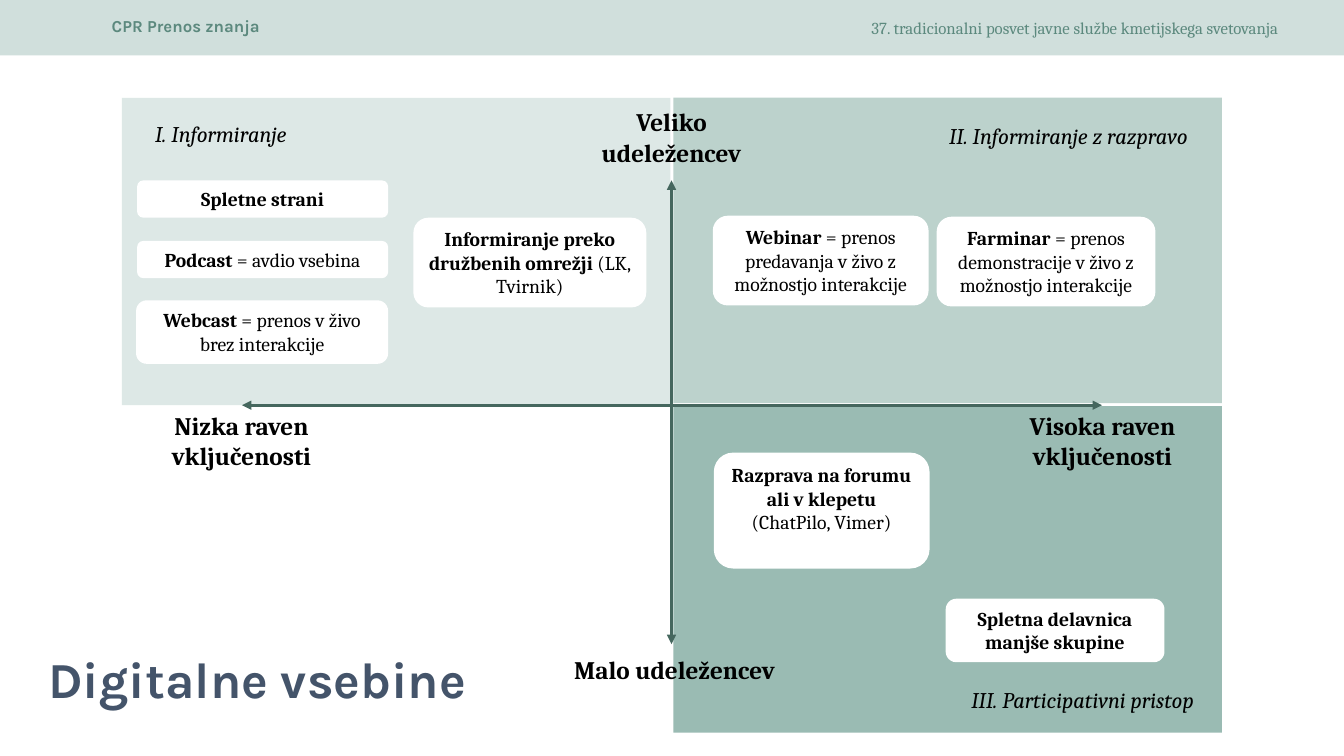
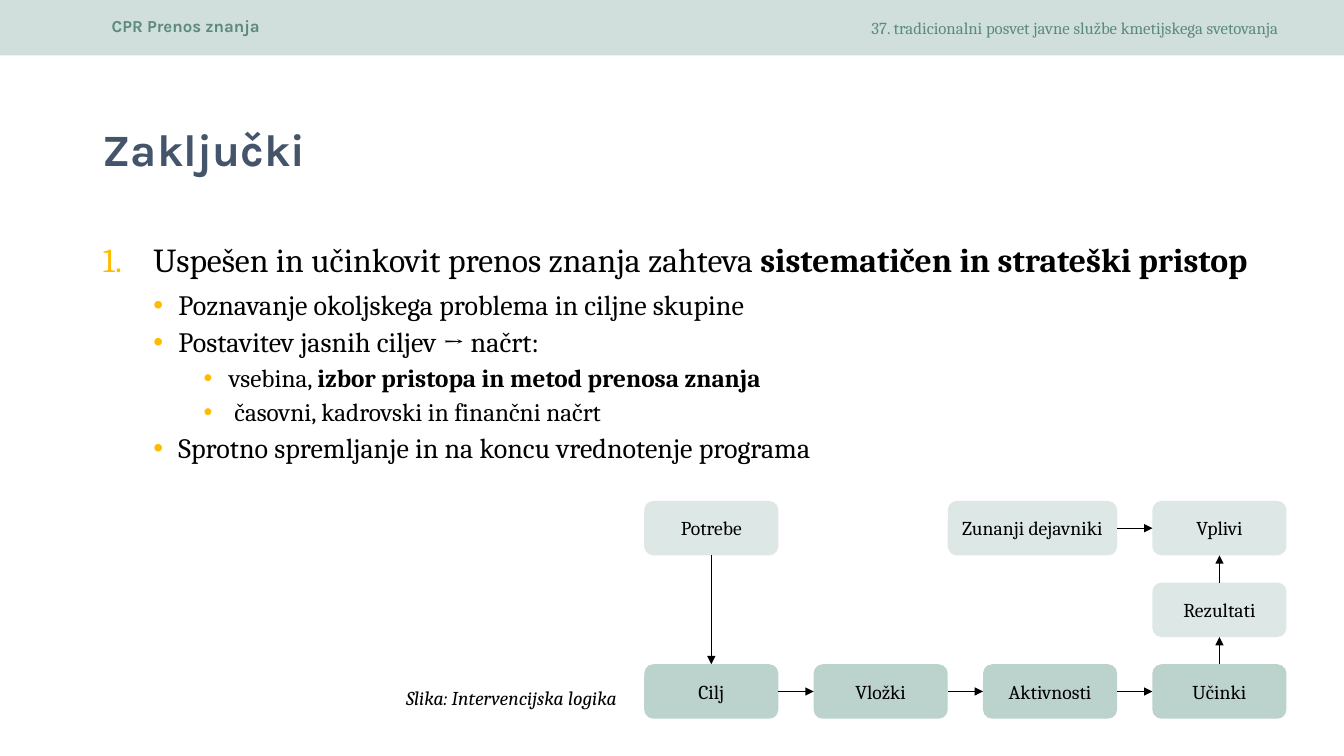
from lxml import etree
from pptx import Presentation
from pptx.dml.color import RGBColor
from pptx.enum import shapes as kinds, text as txt
from pptx.oxml.ns import qn
from pptx.util import Inches, Pt

BAND, HEAD, TITLE = "D0DFDC", "5C897E", "44546A"
PALE, MID, DEEP, AXIS = "DDE8E6", "BCD2CC", "9ABBB3", "45675E"
WHITE, BLACK, GOLD = "FFFFFF", "000000", "FFBB00"
SERIF, SANS = "Cambria", "Karla"
LEFT, CENTER, RIGHT = txt.PP_ALIGN.LEFT, txt.PP_ALIGN.CENTER, txt.PP_ALIGN.RIGHT
TOP, MIDDLE = txt.MSO_ANCHOR.TOP, txt.MSO_ANCHOR.MIDDLE
RECT = kinds.MSO_SHAPE.RECTANGLE
ROUND = kinds.MSO_SHAPE.ROUNDED_RECTANGLE
CARD = kinds.MSO_SHAPE.FLOWCHART_ALTERNATE_PROCESS

# Text between ** marks is bold.
QUADS = [((6.68, 0.97, 5.44, 3.03), MID),
         ((1.21, 0.97, 5.44, 3.05), PALE),
         ((6.68, 4.03, 5.44, 3.24), DEEP)]
AXES = [((6.66, 1.79), (6.66, 6.39)), ((2.4, 4.02), (10.93, 4.02))]
CARDS = [
    ((1.36, 1.79, 2.49, 0.37), "**Spletne strani**"),
    ((1.36, 2.39, 2.49, 0.37), "**Podcast** = avdio vsebina"),
    ((1.35, 2.98, 2.5, 0.63), "**Webcast** = prenos v živo brez interakcije"),
    ((4.1, 2.16, 2.31, 0.89),
     "**Informiranje preko družbenih omrežji** (LK, Tvirnik)"),
    ((7.07, 2.14, 2.14, 0.89),
     "**Webinar** = prenos predavanja v živo z možnostjo interakcije"),
    ((9.29, 2.15, 2.17, 0.89),
     "**Farminar** = prenos demonstracije v živo z možnostjo interakcije"),
    ((7.08, 4.49, 2.14, 1.15),
     "**Razprava na forumu ali v klepetu** (ChatPilo, Vimer)"),
    ((9.38, 5.94, 2.17, 0.63), "**Spletna delavnica manjše skupine**"),
]
ENDS = [((5.66, 1.01, 2, 0.7), "Veliko udeležencev"),
        ((5.53, 6.44, 2.32, 0.41), "Malo udeležencev"),
        ((1.44, 4.02, 1.91, 0.71), "Nizka raven vključenosti"),
        ((9.97, 4.02, 1.93, 0.71), "Visoka raven vključenosti")]
LABELS = [((1.44, 1.14, 2.65, 0.37), "I. Informiranje", LEFT),
          ((8.84, 1.16, 3.04, 0.37), "II. Informiranje z razpravo", RIGHT),
          ((8.84, 6.76, 3.1, 0.37), "III. Participativni pristop", RIGHT)]

POINTS = [
    (0, "Uspešen in učinkovit prenos znanja zahteva "
        "**sistematičen in strateški pristop**"),
    (1, "Poznavanje okoljskega problema in ciljne skupine"),
    (1, "Postavitev jasnih ciljev → načrt:"),
    (2, "vsebina, **izbor pristopa in metod prenosa znanja**"),
    (2, " časovni, kadrovski in finančni načrt"),
    (1, "Sprotno spremljanje in na koncu vrednotenje programa"),
]
# Per level: size, left margin, hanging indent, space before, space after
LEVELS = [(24, 0.5, 0.5, 0, 3), (20, 0.75, 0.25, 5, 0), (18, 1.25, 0.25, 5, 0)]

# Name, column, row, fill
STEPS = [("Potrebe", 0, 0, PALE), ("Cilj", 0, 2, MID), ("Vložki", 1, 2, MID),
         ("Aktivnosti", 2, 2, MID), ("Učinki", 3, 2, MID),
         ("Rezultati", 3, 1, PALE), ("Vplivi", 3, 0, PALE),
         ("Zunanji dejavniki", 2, 0, PALE)]
WIDE = {"Zunanji dejavniki": 1.68}
# From, side, to, side
LINKS = [("Potrebe", 2, "Cilj", 0), ("Cilj", 3, "Vložki", 1),
         ("Vložki", 3, "Aktivnosti", 1), ("Aktivnosti", 3, "Učinki", 1),
         ("Učinki", 0, "Rezultati", 2), ("Rezultati", 0, "Vplivi", 2),
         ("Zunanji dejavniki", 3, "Vplivi", 1)]


def color(code):
    return RGBColor.from_string(code)


def place(shape, at):
    shape.left, shape.top, shape.width, shape.height = map(Inches, at)


def fill_para(para, words, size=14, font=SERIF, ink=BLACK, bold=False,
              italic=False, align=LEFT, spacing=None):
    para.alignment = align
    if spacing:
        para.line_spacing = spacing
    for i, part in enumerate(words.split("**")):
        if part:
            run = para.add_run()
            run.text = part
            face = run.font
            face.name, face.size = font, Pt(size)
            face.bold, face.italic = bold or i % 2 == 1, italic
            face.color.rgb = color(ink)


def write(shape, words, anchor=TOP, **style):
    frame = shape.text_frame
    frame.word_wrap = True
    frame.auto_size = txt.MSO_AUTO_SIZE.NONE
    frame.vertical_anchor = anchor
    fill_para(frame.paragraphs[0], words, **style)


def label(slide, at, words, **style):
    box = slide.shapes.add_textbox(*map(Inches, at))
    write(box, words, **style)
    return box


def block(slide, kind, at, fill, words="", **style):
    shape = slide.shapes.add_shape(kind, *map(Inches, at))
    shape.shadow.inherit = False
    shape.fill.solid()
    shape.fill.fore_color.rgb = color(fill)
    shape.line.fill.background()
    if words:
        write(shape, words, align=CENTER, **style)
    return shape


def arrow(slide, start, end, ink, width, tips=("tailEnd",)):
    points = map(Inches, (*start, *end))
    line = slide.shapes.add_connector(kinds.MSO_CONNECTOR.STRAIGHT, *points)
    line.line.color.rgb = color(ink)
    line.line.width = Pt(width)
    props = line.element.spPr
    for tip in tips:
        etree.SubElement(props.find(qn("a:ln")), qn("a:" + tip), type="triangle")
    etree.SubElement(props, qn("a:effectLst"))
    return line


def title(slide, at, words, size):
    place(slide.shapes.title, at)
    write(slide.shapes.title, words, anchor=MIDDLE, size=size, font=SANS,
          ink=TITLE, bold=True, spacing=0.9)


def bullet(para, level):
    """Give a list paragraph its number or dot, indent and spacing."""
    size, margin, hang, before, after = LEVELS[level]
    para.level = level
    props = para._p.get_or_add_pPr()
    props.set("marL", str(Inches(margin)))
    props.set("indent", str(-Inches(hang)))
    tint = etree.SubElement(props, qn("a:buClr"))
    etree.SubElement(tint, qn("a:srgbClr"), val=GOLD)
    if level:
        etree.SubElement(props, qn("a:buFont"), typeface="Arial")
        etree.SubElement(props, qn("a:buChar"), char="•")
    else:
        etree.SubElement(props, qn("a:buFont"), typeface="+mj-lt")
        etree.SubElement(props, qn("a:buAutoNum"), type="arabicPeriod")
    para.space_before, para.space_after = Pt(before), Pt(after)
    return size


def add_header(deck, slide):
    """Draw the band and its texts, then move them to the slide master."""
    parts = [
        block(slide, RECT, (0, 0, 13.33, 0.55), BAND),
        label(slide, (1.01, 0.11, 6.67, 0.3), "CPR Prenos znanja",
              size=12, font=SANS, ink=HEAD, bold=True),
        label(slide, (8.23, 0.08, 4.55, 0.4),
              "37. tradicionalni posvet javne službe kmetijskega svetovanja",
              size=12, ink=HEAD, align=RIGHT, anchor=MIDDLE),
    ]
    tree = deck.slide_master.shapes.element
    for i, part in enumerate(parts):
        tree.insert(2 + i, part.element)


def build_matrix(slide):
    title(slide, (0.38, 6.04, 5.49, 1.45), "Digitalne vsebine", 36)
    for at, fill in QUADS:
        block(slide, RECT, at, fill)
    for start, end in AXES:
        arrow(slide, start, end, AXIS, 2.25, ("headEnd", "tailEnd"))
    for at, words in CARDS:
        block(slide, CARD, at, WHITE, words)
    for at, words in ENDS:
        label(slide, at, words, size=18, bold=True, align=CENTER)
    for at, words, align in LABELS:
        label(slide, at, words, size=16, italic=True, align=align)


def build_summary(slide):
    title(slide, (0.92, 0.78, 11.5, 1.45), "Zaključki", 32)
    body = slide.placeholders[1]
    place(body, (0.92, 2.37, 12.01, 4.76))
    frame = body.text_frame
    frame.auto_size = txt.MSO_AUTO_SIZE.NONE
    for i, (level, words) in enumerate(POINTS):
        para = frame.add_paragraph() if i else frame.paragraphs[0]
        size = bullet(para, level)
        fill_para(para, words, size=size, spacing=0.9)

    steps = {}
    for name, col, row, fill in STEPS:
        width = WIDE.get(name, 1.33)
        right = 7.72 + 1.68 * col
        at = (right - width, 4.97 + 0.81 * row, width, 0.54)
        steps[name] = block(slide, ROUND, at, fill, name, anchor=MIDDLE)
    for source, out, target, into in LINKS:
        line = arrow(slide, (0, 0), (1, 1), BLACK, 0.5)
        line.begin_connect(steps[source], out)
        line.end_connect(steps[target], into)
    label(slide, (3.07, 6.76, 3.15, 0.34), "Slika: Intervencijska logika",
          italic=True, align=RIGHT)


def main():
    deck = Presentation()
    deck.slide_width, deck.slide_height = Inches(13.33), Inches(7.5)
    matrix = deck.slides.add_slide(deck.slide_layouts[5])
    add_header(deck, matrix)
    build_matrix(matrix)
    build_summary(deck.slides.add_slide(deck.slide_layouts[1]))
    deck.save("out.pptx")


if __name__ == "__main__":
    main()
